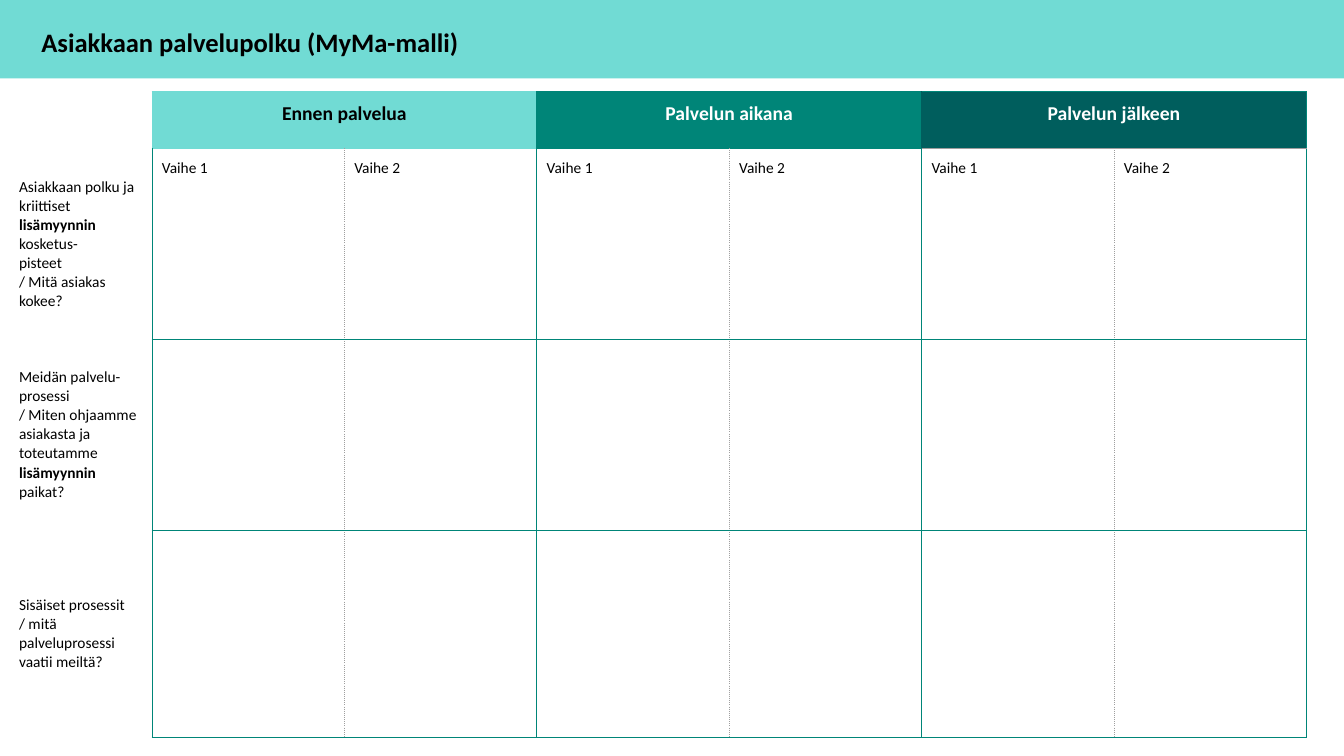
from pptx import Presentation
from pptx.dml.color import RGBColor
from pptx.enum.shapes import MSO_SHAPE as Shape
from pptx.enum.text import MSO_ANCHOR as Anchor, PP_ALIGN as Align
from pptx.oxml import parse_xml
from pptx.oxml.ns import nsdecls
from pptx.util import Cm, Pt

AQUA, TEAL, PETROL, GREY = "71DBD4", "008578", "005E5D", "9E9E9E"
BLACK, WHITE = "000000", "FFFFFF"
FONT = "Calibri"
KEYWORD = "lisämyynnin"

PHASES = [
    ("Ennen palvelua", AQUA, BLACK, AQUA),
    ("Palvelun aikana", TEAL, WHITE, TEAL),
    ("Palvelun jälkeen", PETROL, WHITE, GREY),
]
ROW_LABELS = [
    ["Asiakkaan polku ja kriittiset lisämyynnin kosketus-", "pisteet",
     "/ Mitä asiakas kokee?"],
    ["Meidän palvelu-", "prosessi",
     "/ Miten ohjaamme asiakasta ja toteutamme lisämyynnin paikat?"],
    ["Sisäiset prosessit", "/ mitä palveluprosessi vaatii meiltä?"],
]


def style(run, size, color=BLACK, bold=False):
    run.font.name, run.font.size, run.font.bold = FONT, Pt(size), bold
    run.font.color.rgb = RGBColor.from_string(color)


def set_borders(cell, **colors):
    """Draw the given sides (L, R, T, B); grey upright sides are dotted."""
    properties = cell._tc.get_or_add_tcPr()
    sides = [side for side in "LRTB" if side in colors]
    for position, side in enumerate(sides):
        color = colors[side]
        dash = "sysDot" if color == GREY and side in "LR" else "solid"
        properties.insert(position, parse_xml(
            f'<a:ln{side} {nsdecls("a")} w="9525"><a:solidFill>'
            f'<a:srgbClr val="{color}"/></a:solidFill>'
            f'<a:prstDash val="{dash}"/></a:ln{side}>'))


prs = Presentation()
prs.slide_width, prs.slide_height = Cm(33.87), Cm(19.05)
slide = prs.slides.add_slide(prs.slide_layouts[5])

# Title on its band
title = slide.shapes.title
title.left, title.top, title.width, title.height = Cm(0.79), Cm(0.41), Cm(23.5), Cm(1.5)
title.text_frame.text = "Asiakkaan palvelupolku (MyMa-malli)"
title.text_frame.vertical_anchor = Anchor.TOP
heading = title.text_frame.paragraphs[0]
heading.alignment, heading.line_spacing = Align.LEFT, 1.15
style(heading.runs[0], 19, bold=True)

band = slide.shapes.add_shape(Shape.RECTANGLE, Cm(0), Cm(0), prs.slide_width, Cm(1.98))
band.shadow.inherit = False
band.fill.solid()
band.fill.fore_color.rgb = RGBColor.from_string(AQUA)
band.line.fill.background()
title.element.addprevious(band.element)

# Service path grid
columns = [3.6] + [4.85] * 6
rows = [1.43, 4.81, 4.81, 5.22]
path_grid = slide.shapes.add_table(
    len(rows), len(columns), Cm(0.23), Cm(2.31), Cm(sum(columns)), Cm(sum(rows))).table
path_grid.first_row = path_grid.horz_banding = False
for column, width in zip(path_grid.columns, columns):
    column.width = Cm(width)
for row, height in zip(path_grid.rows, rows):
    row.height = Cm(height)
for cell in path_grid.iter_cells():
    cell.fill.background()
    cell.margin_left = cell.margin_right = Cm(0.25)
    cell.margin_top = cell.margin_bottom = Cm(0.25)

# Phase headers and the two steps below each
set_borders(path_grid.cell(0, 0), R=AQUA)
for phase, (name, fill, text_color, underline) in enumerate(PHASES):
    first = 1 + 2 * phase
    header = path_grid.cell(0, first)
    header.merge(path_grid.cell(0, first + 1))
    header.text_frame.text = name
    header.text_frame.paragraphs[0].alignment = Align.CENTER
    style(header.text_frame.paragraphs[0].runs[0], 14, text_color, bold=True)
    edge = AQUA if phase == 0 else TEAL
    for step in (1, 2):
        column = first + step - 1
        top = path_grid.cell(0, column)
        top.fill.solid()
        top.fill.fore_color.rgb = RGBColor.from_string(fill)
        set_borders(top, L=fill, R=edge, T=edge, B=underline)

        step_cell = path_grid.cell(1, column)
        step_cell.text_frame.text = f"Vaihe {step}"
        style(step_cell.text_frame.paragraphs[0].runs[0], 11)
        left, right = (TEAL, GREY) if step == 1 else (GREY, TEAL)
        for row in range(1, len(rows)):
            set_borders(path_grid.cell(row, column), L=left, R=right,
                        T=underline if row == 1 else TEAL, B=TEAL)

# Row labels with the keyword in bold
for row, lines in enumerate(ROW_LABELS, start=1):
    label = path_grid.cell(row, 0)
    label.vertical_anchor = Anchor.MIDDLE
    set_borders(label, R=TEAL)
    label.text_frame.text = "\n".join(lines)
    for paragraph, line in zip(label.text_frame.paragraphs, lines):
        before, keyword, after = line.partition(KEYWORD)
        paragraph.runs[0].text = before
        for part in filter(None, (keyword, after)):
            paragraph.add_run().text = part
        for run in paragraph.runs:
            style(run, 11, bold=run.text == KEYWORD)

prs.save("out.pptx")
